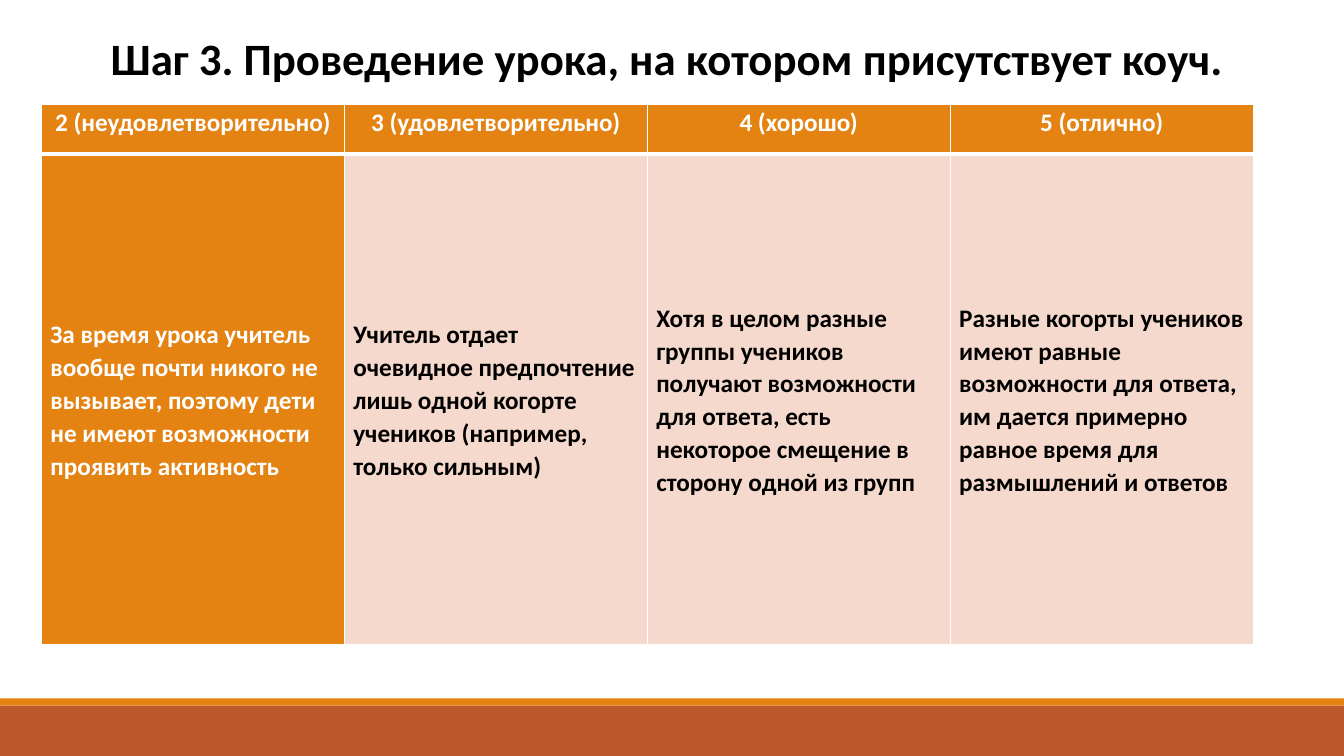
from dataclasses import dataclass

from lxml import etree
from pptx import Presentation
from pptx.dml.color import RGBColor
from pptx.enum.shapes import MSO_SHAPE
from pptx.enum.text import MSO_ANCHOR, PP_ALIGN
from pptx.oxml.ns import qn
from pptx.util import Inches, Pt

RECTANGLE = MSO_SHAPE.RECTANGLE
TOP, MIDDLE = MSO_ANCHOR.TOP, MSO_ANCHOR.MIDDLE
LEFT, CENTER = PP_ALIGN.LEFT, PP_ALIGN.CENTER


@dataclass(frozen=True)
class Theme:
    font: str = "Calibri"
    title_size: float = 32
    table_size: float = 18
    orange: str = "E48312"
    rust: str = "BD582C"
    blush: str = "F5D9CC"
    white: str = "FFFFFF"
    black: str = "000000"
    thin_border: float = 1
    thick_border: float = 3


THEME = Theme()
SLIDE_WIDTH, SLIDE_HEIGHT = 13.33, 7.5
TITLE = "Шаг 3. Проведение урока, на котором присутствует коуч."
GRADES = [
    ("2 (неудовлетворительно)",
     "За время урока учитель вообще почти никого не вызывает, "
     "поэтому дети не имеют возможности проявить активность"),
    ("3 (удовлетворительно)",
     "Учитель отдает очевидное предпочтение лишь одной когорте "
     "учеников (например, только сильным)"),
    ("4 (хорошо)",
     "Хотя в целом разные группы учеников получают возможности "
     "для ответа, есть некоторое смещение в сторону одной из групп"),
    ("5 (отлично)",
     "Разные когорты учеников имеют равные возможности для ответа, "
     "им дается примерно равное время для размышлений и ответов"),
]


def add_run(paragraph, text, size, color):
    run = paragraph.add_run()
    run.text = text
    run.font.name = THEME.font
    run.font.size = Pt(size)
    run.font.bold = True
    run.font.color.rgb = RGBColor.from_string(color)


def add_band(slide, left, top, width, height, color):
    band = slide.shapes.add_shape(
        RECTANGLE, Inches(left), Inches(top), Inches(width), Inches(height))
    band.shadow.inherit = False
    band.fill.solid()
    band.fill.fore_color.rgb = RGBColor.from_string(color)
    band.line.fill.background()


def add_footer(slide, left, top, width, height, stripe_height=0.07):
    """Place a rust band with an orange stripe along its top edge."""
    add_band(slide, left, top + stripe_height, width, height - stripe_height, THEME.rust)
    add_band(slide, left, top, width, stripe_height, THEME.orange)


def add_title(slide, left, top, width, height):
    box = slide.shapes.add_textbox(
        Inches(left), Inches(top), Inches(width), Inches(height))
    frame = box.text_frame
    frame.word_wrap = False
    frame.vertical_anchor = TOP
    add_run(frame.paragraphs[0], TITLE, THEME.title_size, THEME.black)


def set_borders(cell, top_width, bottom_width):
    properties = cell._tc.get_or_add_tcPr()
    widths = {"L": THEME.thin_border, "R": THEME.thin_border,
              "T": top_width, "B": bottom_width}
    for index, (side, width) in enumerate(widths.items()):
        line = etree.Element(qn(f"a:ln{side}"), w=str(Pt(width)))
        fill = etree.SubElement(line, qn("a:solidFill"))
        etree.SubElement(fill, qn("a:srgbClr"), val=THEME.white)
        properties.insert(index, line)


def fill_cell(cell, text, fill, color, alignment, line_spacing):
    cell.fill.solid()
    cell.fill.fore_color.rgb = RGBColor.from_string(fill)
    cell.vertical_anchor = MIDDLE
    cell.margin_left = cell.margin_right = Inches(0.09)
    cell.margin_top = cell.margin_bottom = Inches(0.05)
    paragraph = cell.text_frame.paragraphs[0]
    paragraph.alignment = alignment
    paragraph.line_spacing = line_spacing
    paragraph.space_before = Pt(3.4)
    paragraph.space_after = Pt(6.8)
    add_run(paragraph, text, THEME.table_size, color)


def add_grade_table(slide, left, top, width, height, header_height=0.49):
    table = slide.shapes.add_table(
        2, len(GRADES), Inches(left), Inches(top), Inches(width), Inches(height)).table
    table.rows[0].height = Inches(header_height)
    table.rows[1].height = Inches(height - header_height)
    for column, (grade, description) in enumerate(GRADES):
        table.columns[column].width = Inches(width / len(GRADES))
        header, body = table.cell(0, column), table.cell(1, column)
        fill_cell(header, grade, THEME.orange, THEME.white, CENTER, Pt(12.2))
        body_fill, body_color = (
            (THEME.orange, THEME.white) if column == 0 else (THEME.blush, THEME.black))
        fill_cell(body, description, body_fill, body_color, LEFT, 1.07)
        set_borders(header, THEME.thin_border, THEME.thick_border)
        set_borders(body, THEME.thick_border, THEME.thin_border)


def main():
    presentation = Presentation()
    presentation.slide_width = Inches(SLIDE_WIDTH)
    presentation.slide_height = Inches(SLIDE_HEIGHT)
    slide = presentation.slides.add_slide(presentation.slide_layouts[6])
    add_footer(slide, 0, 6.93, SLIDE_WIDTH, 0.57)
    add_title(slide, 1, 0.26, 11.34, 1.48)
    add_grade_table(slide, 0.41, 1.04, 12.02, 5.36)
    presentation.save("out.pptx")


if __name__ == "__main__":
    main()
